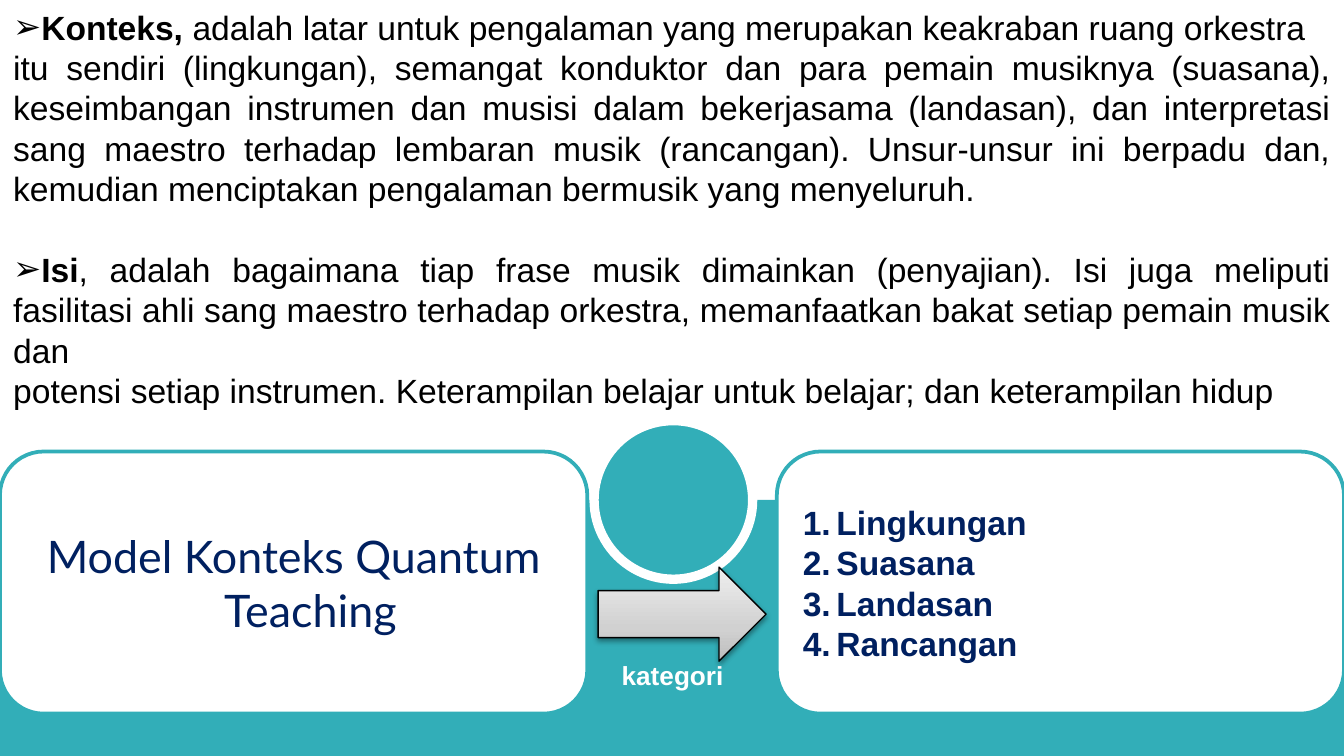
from dataclasses import dataclass

from lxml import etree
from pptx import Presentation
from pptx.dml.color import RGBColor
from pptx.enum.shapes import MSO_SHAPE
from pptx.enum.text import MSO_ANCHOR, MSO_AUTO_SIZE, PP_ALIGN
from pptx.oxml import parse_xml
from pptx.oxml.ns import nsdecls, qn
from pptx.util import Inches, Pt

RECTANGLE, ELLIPSE = MSO_SHAPE.RECTANGLE, MSO_SHAPE.OVAL
ROUNDED, ARROW = MSO_SHAPE.ROUNDED_RECTANGLE, MSO_SHAPE.RIGHT_ARROW
LEFT, CENTER, JUSTIFY = PP_ALIGN.LEFT, PP_ALIGN.CENTER, PP_ALIGN.JUSTIFY
MIDDLE, GROW = MSO_ANCHOR.MIDDLE, MSO_AUTO_SIZE.SHAPE_TO_FIT_TEXT


@dataclass(frozen=True)
class Theme:
    teal: str = "32AEB8"
    navy: str = "002060"
    white: str = "FFFFFF"
    black: str = "000000"
    metal: tuple = ((0, "BDBDBD"), (35, "D1D1D1"), (100, "EEEEEE"))
    body_font: str = "Arial"
    title_font: str = "Lato"
    title_size: int = 24
    body_size: int = 18
    label_size: int = 14


THEME = Theme()


def add_text(frame, spans, first=False, align=LEFT, font=THEME.body_font,
             size=THEME.body_size, color=THEME.black, bullet=None,
             numbered=False, hanging=0, before=0):
    """Add one paragraph made of (text, bold) spans."""
    para = frame.paragraphs[0] if first else frame.add_paragraph()
    para.alignment = align
    para.space_before = Pt(before)
    props = para._p.get_or_add_pPr()
    props.set("marL", str(Inches(hanging)))
    props.set("indent", str(-Inches(hanging)))
    if bullet:
        etree.SubElement(props, qn("a:buFont"), typeface=font)
        etree.SubElement(props, qn("a:buChar"), char=bullet)
    elif numbered:
        etree.SubElement(props, qn("a:buFont"), typeface="+mj-lt")
        etree.SubElement(props, qn("a:buAutoNum"), type="arabicPeriod")
    else:
        etree.SubElement(props, qn("a:buNone"))
    for text, bold in spans:
        span = para.add_run()
        span.text = text
        span.font.name, span.font.size, span.font.bold = font, Pt(size), bold
        span.font.color.rgb = RGBColor.from_string(color)


class SlideBuilder:
    def __init__(self, slide, theme):
        self.slide, self.theme = slide, theme

    def shape(self, kind, place, fill, line=None, width=0):
        shape = self.slide.shapes.add_shape(kind, *map(Inches, place))
        shape.shadow.inherit = False
        shape.fill.solid()
        shape.fill.fore_color.rgb = RGBColor.from_string(fill)
        if line:
            shape.line.color.rgb = RGBColor.from_string(line)
            shape.line.width = Pt(width)
        else:
            shape.line.fill.background()
        return shape

    def text_box(self, place):
        frame = self.slide.shapes.add_textbox(*map(Inches, place)).text_frame
        frame.word_wrap = True
        frame.auto_size = GROW
        return frame

    def card(self, place):
        frame = self.shape(ROUNDED, place, self.theme.white, self.theme.teal, 2).text_frame
        frame.word_wrap = True
        frame.vertical_anchor = MIDDLE
        return frame

    def metal_arrow(self, place):
        arrow = self.shape(ARROW, place, self.theme.white, self.theme.black, 0.75)
        props = arrow._element.spPr
        stops = "".join(
            f'<a:gs pos="{position * 1000}"><a:srgbClr val="{color}"/></a:gs>'
            for position, color in self.theme.metal)
        gradient = parse_xml(
            f'<a:gradFill {nsdecls("a")} rotWithShape="1"><a:gsLst>{stops}</a:gsLst>'
            '<a:lin ang="16200000" scaled="0"/></a:gradFill>')
        props.replace(props.find(qn("a:solidFill")), gradient)
        shadow = parse_xml(
            f'<a:outerShdw {nsdecls("a")} blurRad="{Pt(3.1)}" dist="{Pt(1.6)}" '
            f'dir="5400000" rotWithShape="0"><a:srgbClr val="{self.theme.black}">'
            '<a:alpha val="38000"/></a:srgbClr></a:outerShdw>')
        props.find(qn("a:effectLst")).append(shadow)


def main():
    # Widescreen page, 16 to 9
    deck = Presentation()
    deck.slide_width = Inches(10)
    deck.slide_height = deck.slide_width * 9 // 16
    page = SlideBuilder(deck.slides.add_slide(deck.slide_layouts[6]), THEME)

    # Teal band and circle
    page.shape(RECTANGLE, (0, 3.72, 10, 1.91), THEME.teal)
    page.shape(ELLIPSE, (4.42, 3.13, 1.18, 1.18), THEME.teal, THEME.white, 5)

    # Arrow label
    label = page.text_box((4.1, 4.86, 1.81, 0.34))
    add_text(label, [("kategori", True)], first=True, align=CENTER,
             size=THEME.label_size, color=THEME.white)

    # Explanation of context and content
    body = page.text_box((0, 0, 10, 2.83))
    add_text(body, [
        ("Konteks, ", True),
        ("adalah latar untuk pengalaman yang merupakan keakraban ruang orkestra ", False),
    ], first=True, align=JUSTIFY, bullet="➢")
    add_text(body, [(
        "itu sendiri (lingkungan), semangat konduktor dan para pemain musiknya (suasana), "
        "keseimbangan instrumen dan musisi dalam bekerjasama (landasan), dan interpretasi "
        "sang maestro terhadap lembaran musik (rancangan). Unsur-unsur ini berpadu dan, "
        "kemudian menciptakan pengalaman bermusik yang menyeluruh.", False)], align=JUSTIFY)
    add_text(body, [
        ("Isi", True),
        (", adalah bagaimana tiap frase musik dimainkan (penyajian). Isi juga meliputi "
         "fasilitasi ahli sang maestro terhadap orkestra, memanfaatkan bakat setiap "
         "pemain musik dan ", False),
    ], align=JUSTIFY, bullet="➢", before=21.8)
    add_text(body, [(
        "potensi setiap instrumen. Keterampilan belajar untuk belajar; "
        "dan keterampilan hidup", False)], align=JUSTIFY)

    # Model card and its categories
    model = page.card((0, 3.36, 4.37, 1.95))
    add_text(model, [("Model Konteks Quantum Teaching", False)], first=True, align=CENTER,
             font=THEME.title_font, size=THEME.title_size, color=THEME.navy, hanging=0.25)
    categories = page.card((5.78, 3.36, 4.22, 1.95))
    for index, name in enumerate(("Lingkungan", "Suasana", "Landasan", "Rancangan")):
        add_text(categories, [(name, True)], first=index == 0, color=THEME.navy,
                 numbered=True, hanging=0.25)

    # Arrow between the cards
    page.metal_arrow((4.45, 4.22, 1.25, 0.7))

    deck.save("out.pptx")


if __name__ == "__main__":
    main()
